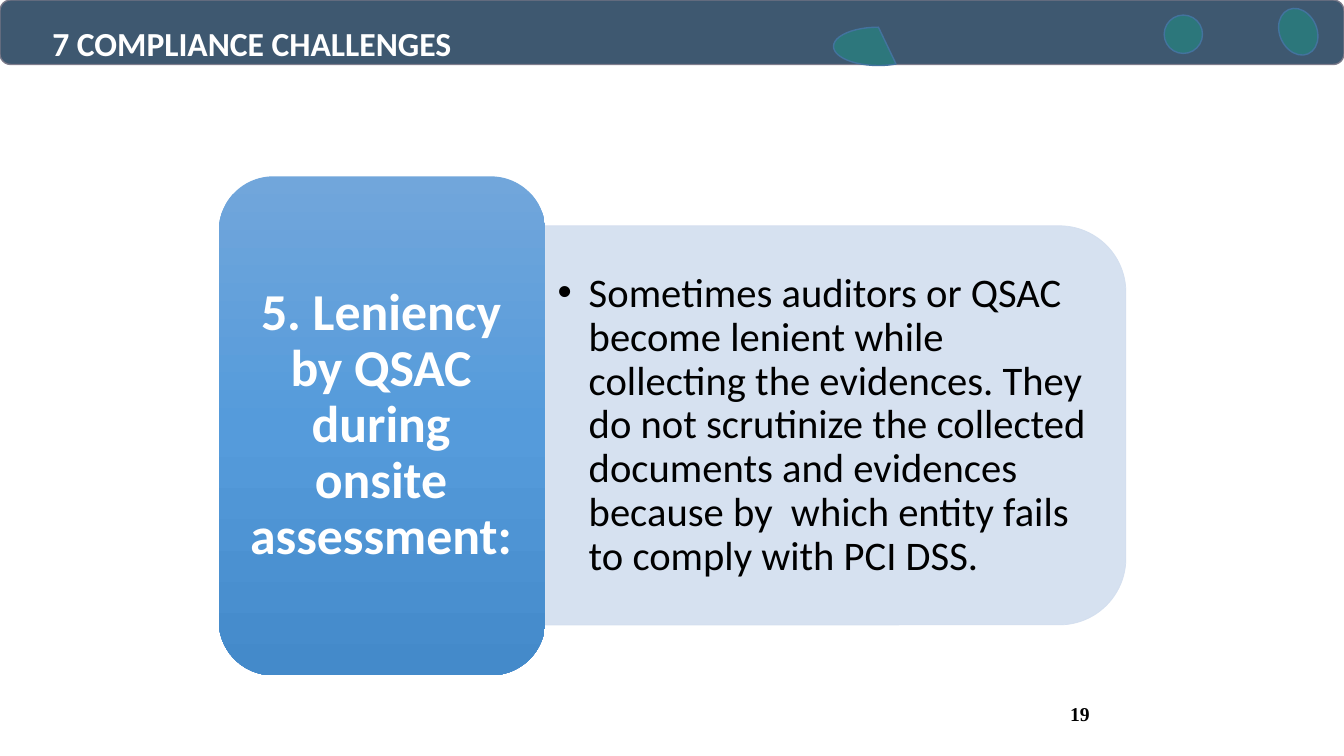
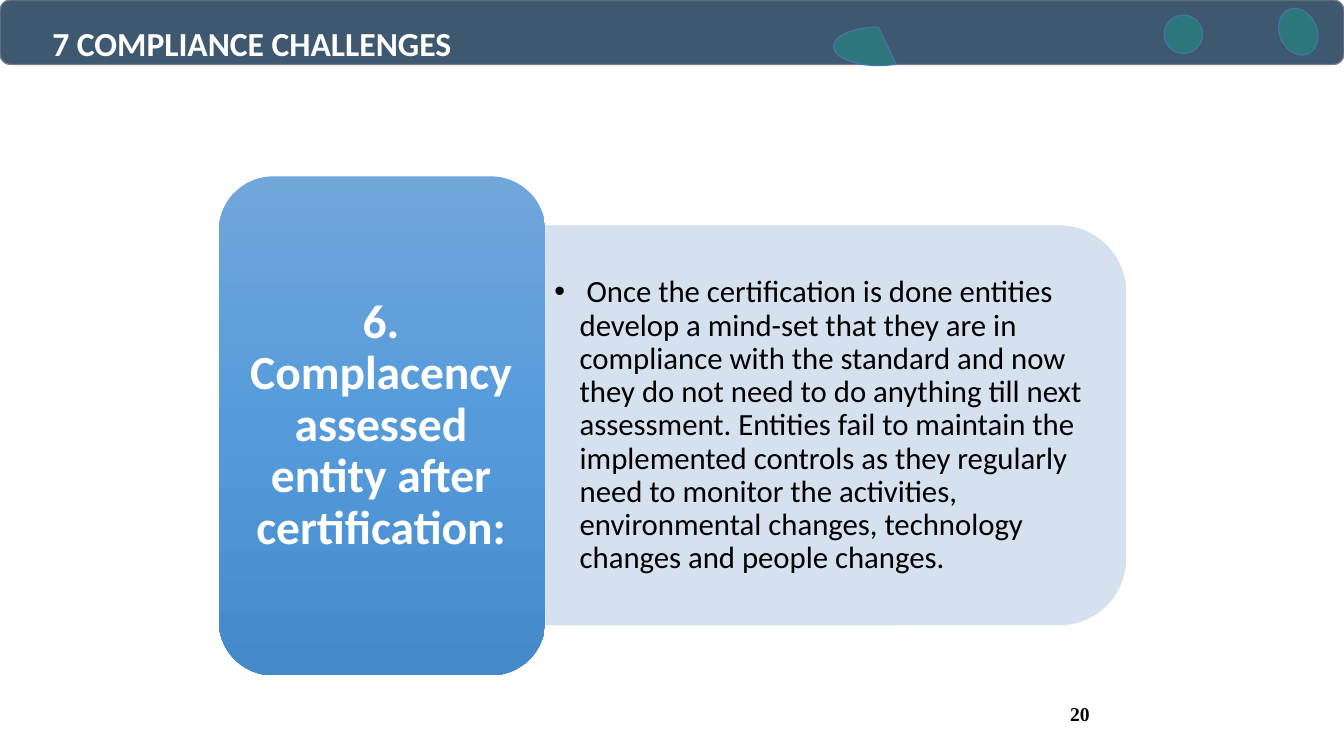
import copy

import lxml.etree
import pptx
import pptx.dml.color
import pptx.enum.shapes
import pptx.enum.text
import pptx.oxml.ns
import pptx.util

SHAPES = pptx.enum.shapes.MSO_SHAPE
ALIGN = pptx.enum.text.PP_ALIGN
ANCHOR = pptx.enum.text.MSO_ANCHOR
qn = pptx.oxml.ns.qn

COLOURS = {
    "band": "3E5870", "band line": "7A7989",
    "bubble": "1C9687", "chord": "2D777C", "bubble line": "43739E",
    "panel": "D2DEEF",
    "label top": "71A6DB", "label middle": "559BDB", "label bottom": "448ACA",
    "white": "FFFFFF", "black": "000000",
}
RGB = {name: pptx.dml.color.RGBColor.from_string(value)
       for name, value in COLOURS.items()}

presentation = pptx.Presentation()
presentation.slide_width = pptx.util.Inches(13.333)
presentation.slide_height = pptx.util.Inches(7.5)

# Places are left, top, width, height in percent of the slide
COLUMN = presentation.slide_width / 100
ROW = presentation.slide_height / 100
TITLE_PLACE = (3.15, 2.4, 38.33, 6.67)
NUMBER_PLACE = (66.22, 91.07, 15.6, 6.67)
PANEL_PLACE = (47.32, 17.87, 29.7, 76.8)
PANEL_TEXT_PLACE = (40.58, 32.53, 41.78, 47.6)
LABEL_PLACE = (16.28, 23.33, 24.3, 66)
LABEL_TEXT_PLACE = (17.4, 25.47, 21.9, 61.73)

# Preset, place, rotation, fill, fill opacity, line, line opacity
HEADER_SHAPES = [
    (SHAPES.ROUNDED_RECTANGLE, (0, 0, 100, 8.53), 0, "band", 100, "band line", 94),
    (SHAPES.OVAL, (86.62, 2, 2.85, 5.07), 0, "bubble", 50, "bubble line", 100),
    (SHAPES.OVAL, (94.8, 1.73, 3.6, 4.93), 246, "bubble", 50, "bubble line", 100),
    (SHAPES.CHORD, (62.02, 3.6, 6.68, 5.07), 0, "chord", 100, "bubble line", 100),
]

TITLE = "7 COMPLIANCE CHALLENGES"
CHALLENGES = [
    {"number": "19",
     "label": "5. Leniency by QSAC during onsite assessment:",
     "label size": 37, "label inset": 0.15,
     "body": "Sometimes auditors or QSAC become lenient while collecting the "
             "evidences. They do not scrutinize the collected documents and "
             "evidences because by  which entity fails to comply with PCI DSS.",
     "body size": 29, "body inset": 0.12, "indent": 0.31},
    {"number": "20",
     "label": "6. Complacency assessed entity after certification:",
     "label size": 34, "label inset": 0.14,
     "body": " Once the certification is done entities develop a mind-set that "
             "they are in compliance with the standard and now they do not need "
             "to do anything till next assessment. Entities fail to maintain the "
             "implemented controls as they regularly need to monitor the "
             "activities, environmental changes, technology changes and people "
             "changes.",
     "body size": 22, "body inset": 0.09, "indent": 0.25},
]


def add_shape(slide, preset, place, rotation, fill, fill_opacity, line,
              line_opacity, line_width=1):
    left, top, width, height = place
    shape = slide.shapes.add_shape(preset, int(left * COLUMN), int(top * ROW),
                                   int(width * COLUMN), int(height * ROW))
    shape.shadow.inherit = False
    shape.rotation = rotation
    shape.fill.solid()
    shape.fill.fore_color.rgb = RGB[fill]
    shape.line.color.rgb = RGB[line]
    shape.line.width = pptx.util.Pt(line_width)
    paints = shape._element.spPr.iter(qn("a:srgbClr"))
    for paint, opacity in zip(list(paints), (fill_opacity, line_opacity)):
        if opacity < 100:
            alpha = lxml.etree.SubElement(paint, qn("a:alpha"))
            alpha.set("val", str(opacity * 1000))
    return shape


def add_text(slide, place, text, size, colour="black", font="Calibri", bold=True,
             align=ALIGN.LEFT, anchor=ANCHOR.MIDDLE, inset=0.1, spacing=1.0,
             indent=0):
    left, top, width, height = place
    box = slide.shapes.add_textbox(int(left * COLUMN), int(top * ROW),
                                   int(width * COLUMN), int(height * ROW))
    frame = box.text_frame
    frame.word_wrap = True
    frame.vertical_anchor = anchor
    frame.margin_left = frame.margin_right = pptx.util.Inches(inset)
    frame.margin_top = frame.margin_bottom = pptx.util.Inches(inset / 2)
    frame.text = text
    paragraph = frame.paragraphs[0]
    paragraph.alignment = align
    paragraph.line_spacing = spacing
    if indent:
        properties = paragraph._p.get_or_add_pPr()
        properties.set("marL", str(pptx.util.Inches(indent)))
        properties.set("indent", str(-pptx.util.Inches(indent)))
        bullet_font = lxml.etree.SubElement(properties, qn("a:buFont"))
        bullet_font.set("typeface", "Arial")
        lxml.etree.SubElement(properties, qn("a:buChar")).set("char", "•")
    run = paragraph.runs[0]
    run.font.name = font
    run.font.size = pptx.util.Pt(size)
    run.font.bold = bold
    run.font.color.rgb = RGB[colour]


for challenge in CHALLENGES:
    slide = presentation.slides.add_slide(presentation.slide_layouts[6])

    # Header band and slide number
    for header_shape in HEADER_SHAPES:
        add_shape(slide, *header_shape)
    add_text(slide, NUMBER_PLACE, challenge["number"], 14,
             font="Times New Roman", align=ALIGN.RIGHT)

    # Pale panel with the explanation
    add_shape(slide, SHAPES.ROUND_2_SAME_RECTANGLE, PANEL_PLACE, 90,
              "panel", 90, "panel", 90, line_width=0.5)
    add_text(slide, PANEL_TEXT_PLACE, challenge["body"], challenge["body size"],
             bold=False, inset=challenge["body inset"], spacing=0.9,
             indent=challenge["indent"])

    # Blue label, shaded from top to bottom
    label = add_shape(slide, SHAPES.ROUNDED_RECTANGLE, LABEL_PLACE, 0,
                      "label middle", 100, "label middle", 100)
    label.line.fill.background()
    label.fill.gradient()
    label.fill.gradient_angle = 270
    first_stop = label._element.spPr.find(".//" + qn("a:gs"))
    middle_stop = copy.deepcopy(first_stop)
    middle_stop.set("pos", "50000")
    first_stop.addnext(middle_stop)
    for stop, part in zip(label.fill.gradient_stops, ("top", "middle", "bottom")):
        stop.color.rgb = RGB["label " + part]
    add_text(slide, LABEL_TEXT_PLACE, challenge["label"], challenge["label size"],
             colour="white", align=ALIGN.CENTER, inset=challenge["label inset"],
             spacing=0.9)

    # Title
    add_text(slide, TITLE_PLACE, TITLE, 24, colour="white", anchor=ANCHOR.TOP)

presentation.save("out.pptx")
